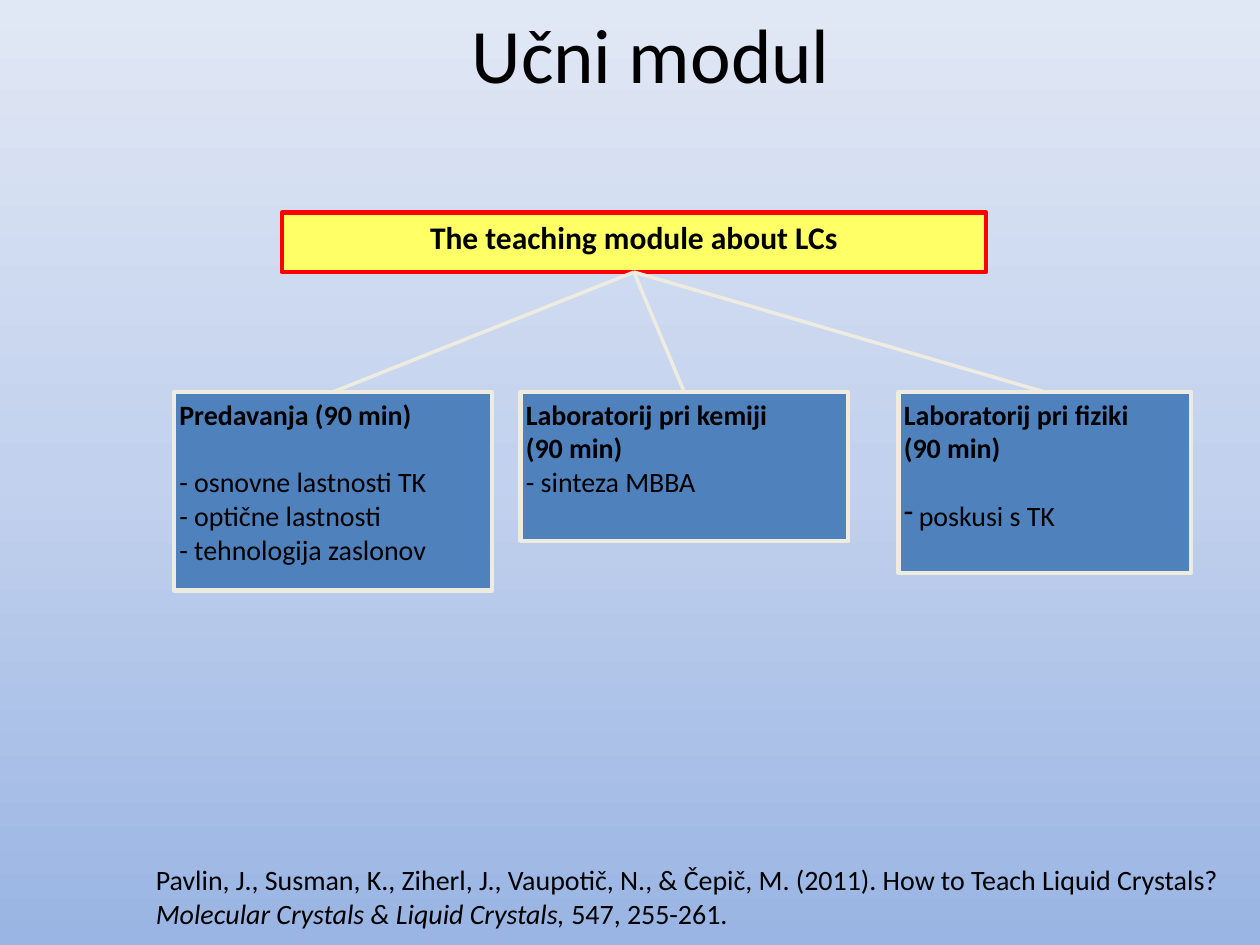
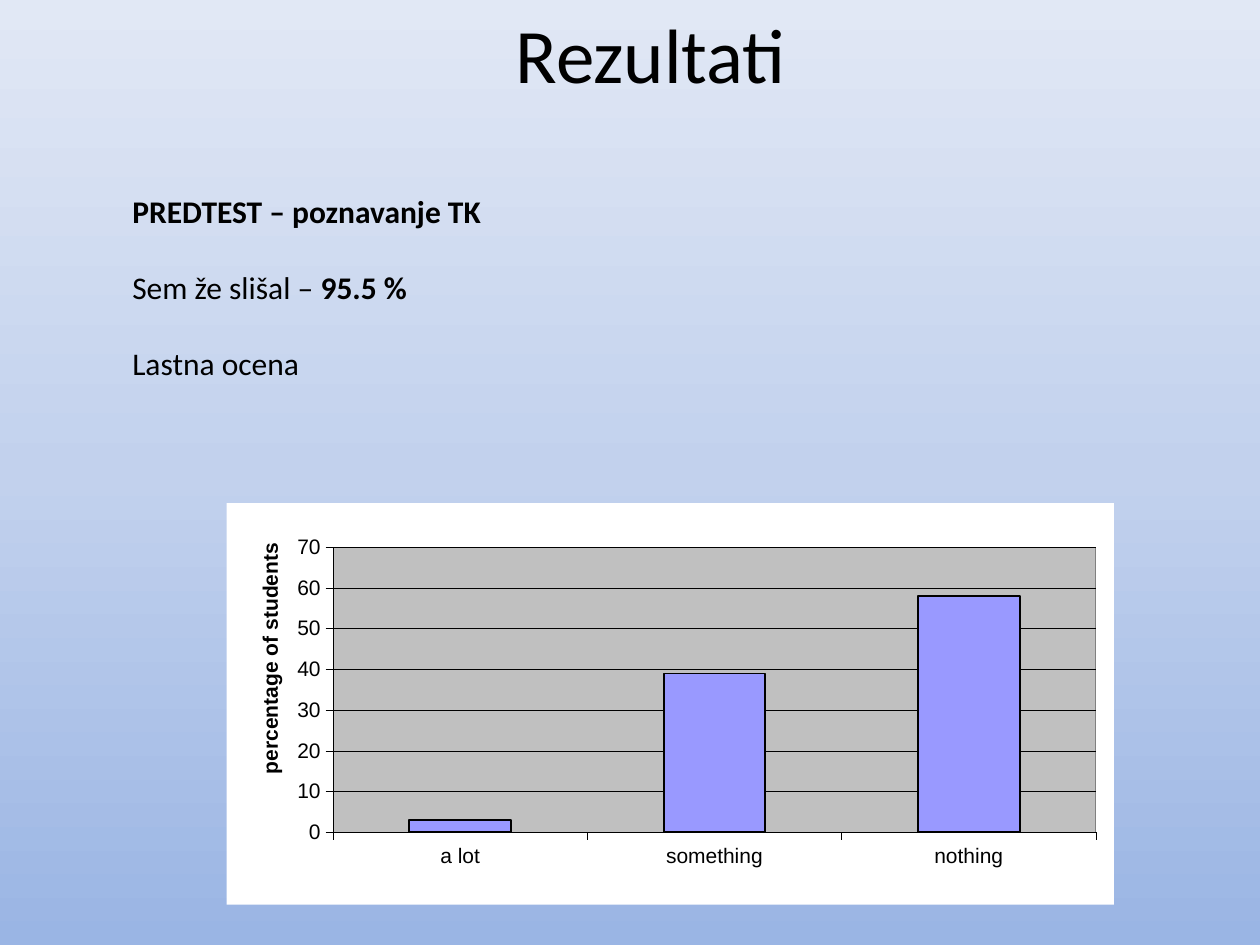
from copy import deepcopy

from lxml import etree
from pptx import Presentation
from pptx.chart.data import CategoryChartData
from pptx.dml.color import RGBColor
from pptx.enum.chart import XL_CHART_TYPE, XL_TICK_MARK
from pptx.enum.shapes import MSO_CONNECTOR, MSO_SHAPE
from pptx.enum.text import MSO_ANCHOR, PP_ALIGN
from pptx.oxml import parse_xml
from pptx.oxml.ns import nsdecls, qn
from pptx.util import Pt

BLACK = RGBColor(0x00, 0x00, 0x00)
WHITE = RGBColor(0xFF, 0xFF, 0xFF)
RED = RGBColor(0xFF, 0x00, 0x00)
YELLOW = RGBColor(0xFF, 0xFF, 0x66)
BLUE = RGBColor(0x4F, 0x81, 0xBD)
CREAM = RGBColor(0xEE, 0xEC, 0xE1)
SILVER = RGBColor(0xC0, 0xC0, 0xC0)
GRAY = RGBColor(0x80, 0x80, 0x80)
LILAC = RGBColor(0x99, 0x99, 0xFF)
BACKGROUND = [
    (0, RGBColor(0x9A, 0xB5, 0xE4)),
    (0.5, RGBColor(0xC2, 0xD1, 0xED)),
    (1, RGBColor(0xE1, 0xE8, 0xF5)),
]

LEFT, CENTER, JUSTIFY = PP_ALIGN.LEFT, PP_ALIGN.CENTER, PP_ALIGN.JUSTIFY
TOP = MSO_ANCHOR.TOP
RECTANGLE = MSO_SHAPE.RECTANGLE
STRAIGHT = MSO_CONNECTOR.STRAIGHT
COLUMNS = XL_CHART_TYPE.COLUMN_CLUSTERED
OUTSIDE = XL_TICK_MARK.OUTSIDE
BOTTOM_SIDE, TOP_SIDE = 2, 0

BOLD = {"bold": True}
ITALIC = {"italic": True}
PLAIN = {}
GAP_16 = {"space_before": Pt(19.5)}
GAP_18 = {"space_before": Pt(22)}
DASH_INDENT = 8.5


def set_all(target, values):
    for name, value in values.items():
        setattr(target, name, value)


def set_line(line, color, width):
    line.color.rgb = color
    line.width = Pt(width)


def sp_pr(fill, border):
    return parse_xml(
        f'<c:spPr {nsdecls("c", "a")}><a:solidFill><a:srgbClr val="{fill}"/></a:solidFill>'
        f"<a:ln>{border}</a:ln></c:spPr>"
    )


def place(parent, index, **values):
    for old in parent.findall(qn("c:layout")):
        parent.remove(old)
    layout = etree.Element(qn("c:layout"))
    manual = etree.SubElement(layout, qn("c:manualLayout"))
    for name, value in values.items():
        etree.SubElement(manual, qn(f"c:{name}")).set("val", str(value))
    parent.insert(index, layout)


class Deck:
    font = "Calibri"
    chart_font = "Arial"

    def __init__(self):
        self.prs = Presentation()
        self.prs.slide_width, self.prs.slide_height = Pt(720), Pt(540)
        self.slide = None

    def add_slide(self, title):
        self.slide = self.prs.slides.add_slide(self.prs.slide_layouts[6])
        fill = self.slide.background.fill
        fill.gradient()
        fill.gradient_angle = 90
        stops = self.slide.element.find(".//" + qn("a:gsLst"))
        stops.insert(1, deepcopy(stops[0]))
        for stop, (position, color) in zip(fill.gradient_stops, BACKGROUND):
            stop.position = position
            stop.color.rgb = color
        self.text((48, 0, 648, 90), [([(title, PLAIN)], PLAIN)], 44, CENTER)

    def fill_frame(self, tf, paragraphs, size, align):
        set_all(tf, {"word_wrap": True, "vertical_anchor": TOP})
        for i, (runs, fmt) in enumerate(paragraphs):
            p = tf.paragraphs[0] if i == 0 else tf.add_paragraph()
            set_all(p, {"alignment": align, **fmt})
            for text, style in runs:
                r = p.add_run()
                r.text = text
                r.font.color.rgb = BLACK
                set_all(r.font, {"name": self.font, "size": Pt(size), **style})

    def text(self, area, paragraphs, size, align=LEFT):
        sp = self.slide.shapes.add_textbox(*map(Pt, area))
        self.fill_frame(sp.text_frame, paragraphs, size, align)

    def box(self, area, paragraphs, size, align, fill, border):
        sp = self.slide.shapes.add_shape(RECTANGLE, *map(Pt, area))
        sp.shadow.inherit = False
        sp.fill.solid()
        sp.fill.fore_color.rgb = fill
        set_line(sp.line, border, 2.5)
        for side in ("left", "top", "right", "bottom"):
            setattr(sp.text_frame, f"margin_{side}", Pt(3))
        self.fill_frame(sp.text_frame, paragraphs, size, align)
        return sp

    def dash(self, p):
        pr = p._p.get_or_add_pPr()
        pr.set("marL", str(Pt(DASH_INDENT)))
        pr.set("indent", str(-Pt(DASH_INDENT)))
        etree.SubElement(pr, qn("a:buChar")).set("char", "-")

    def link(self, parent, child):
        line = self.slide.shapes.add_connector(STRAIGHT, 0, 0, 0, 0)
        line.begin_connect(parent, BOTTOM_SIDE)
        line.end_connect(child, TOP_SIDE)
        set_line(line.line, CREAM, 2)
        etree.SubElement(line.element.spPr, qn("a:effectLst"))

    def chart(self, area, categories, values, axis_title):
        data = CategoryChartData()
        data.categories = categories
        data.add_series("Series 1", values)
        chart = self.slide.shapes.add_chart(COLUMNS, *map(Pt, area), data).chart
        set_all(chart, {"has_legend": False, "has_title": False})
        set_all(chart.font, {"name": self.chart_font, "size": Pt(12)})
        chart.font.color.rgb = BLACK

        plot = chart.plots[0]
        set_all(plot, {"gap_width": 150, "vary_by_categories": False})
        bars = plot.series[0].format
        bars.fill.solid()
        bars.fill.fore_color.rgb = LILAC
        set_line(bars.line, BLACK, 1)

        value_axis = chart.value_axis
        for axis in (chart.category_axis, value_axis):
            axis.major_tick_mark = OUTSIDE
            set_line(axis.format.line, BLACK, 0.25)
        set_all(value_axis, {"minimum_scale": 0, "maximum_scale": 70, "major_unit": 10})
        set_line(value_axis.major_gridlines.format.line, BLACK, 0.25)

        title = value_axis.axis_title
        r = title.text_frame.paragraphs[0].add_run()
        r.text = axis_title
        r.font.color.rgb = BLACK
        set_all(r.font, {"name": self.chart_font, "size": Pt(12), "bold": True})
        place(title.element, 1, xMode="edge", yMode="edge", x=0.03, y=0.09)

        space = chart.element
        plot_area = space.find(".//" + qn("c:plotArea"))
        place(plot_area, 0, layoutTarget="inner", xMode="edge", yMode="edge",
              x=0.12, y=0.11, w=0.86, h=0.71)
        border = f'<a:solidFill><a:srgbClr val="{GRAY}"/></a:solidFill>'
        plot_area.append(sp_pr(SILVER, border))
        space.find(qn("c:txPr")).addprevious(sp_pr(WHITE, "<a:noFill/>"))


def module_slide(deck):
    deck.add_slide("Učni modul")
    module = deck.box((161, 121.5, 402.5, 34),
                      [([("The teaching module about LCs", BOLD)], PLAIN)],
                      18, CENTER, YELLOW, RED)
    parts = [
        (99.5, 181.5, 113.5, JUSTIFY, [
            ([("Predavanja (90 min)", BOLD)], PLAIN),
            ([("- osnovne lastnosti TK", PLAIN)], GAP_16),
            ([("- optične lastnosti", PLAIN)], PLAIN),
            ([("- tehnologija zaslonov", PLAIN)], PLAIN),
        ]),
        (297.5, 187, 85, JUSTIFY, [
            ([("Laboratorij pri kemiji", BOLD)], PLAIN),
            ([("(90 min)", BOLD)], PLAIN),
            ([("- sinteza MBBA", PLAIN)], PLAIN),
        ]),
        (513.5, 167, 103.5, LEFT, [
            ([("Laboratorij pri fiziki", BOLD)], PLAIN),
            ([("(90 min)", BOLD)], PLAIN),
            ([("poskusi s TK", PLAIN)], GAP_16),
        ]),
    ]
    boxes = [deck.box((left, 224, width, height), paragraphs, 16, align, BLUE, CREAM)
             for left, width, height, align, paragraphs in parts]
    deck.dash(boxes[-1].text_frame.paragraphs[-1])
    for part in boxes:
        deck.link(module, part)
    deck.text((82, 489.5, 638, 46), [([
        ("Pavlin, J., Susman, K., Ziherl, J., Vaupotič, N., & Čepič, M. (2011). "
         "How to Teach Liquid Crystals? ", PLAIN),
        ("Molecular Crystals & Liquid Crystals, ", ITALIC),
        ("547, 255-261.", PLAIN),
    ], PLAIN)], 16)


def results_slide(deck):
    deck.add_slide("Rezultati")
    deck.text((68.5, 106, 586, 115), [
        ([("PREDTEST – poznavanje TK", BOLD)], PLAIN),
        ([("Sem že slišal – ", PLAIN), ("95.5 %", BOLD)], GAP_18),
        ([("Lastna ocena", PLAIN)], GAP_18),
    ], 18)
    deck.chart((129.5, 287.5, 507, 229.5), ["a lot", "something", "nothing"],
               [3, 39, 58], "percentage of students")


def main():
    deck = Deck()
    module_slide(deck)
    results_slide(deck)
    deck.prs.save("out.pptx")


if __name__ == "__main__":
    main()
